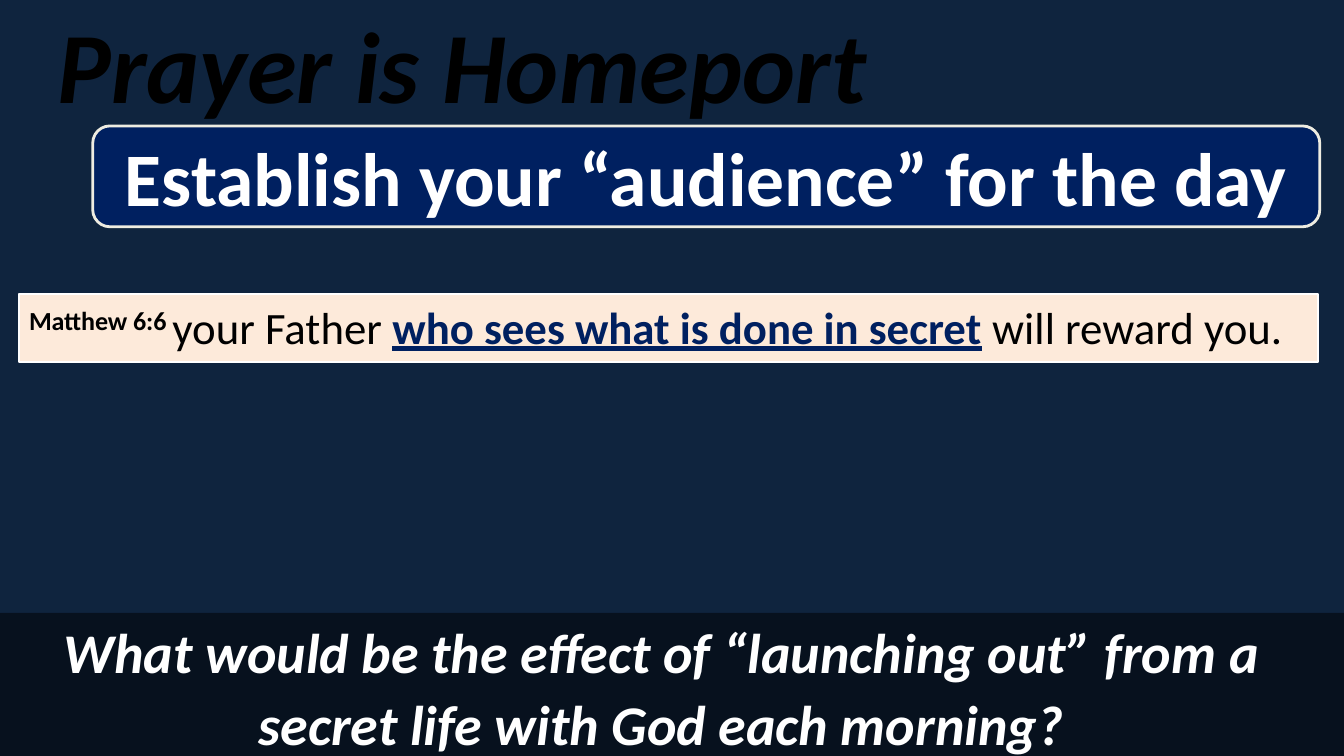
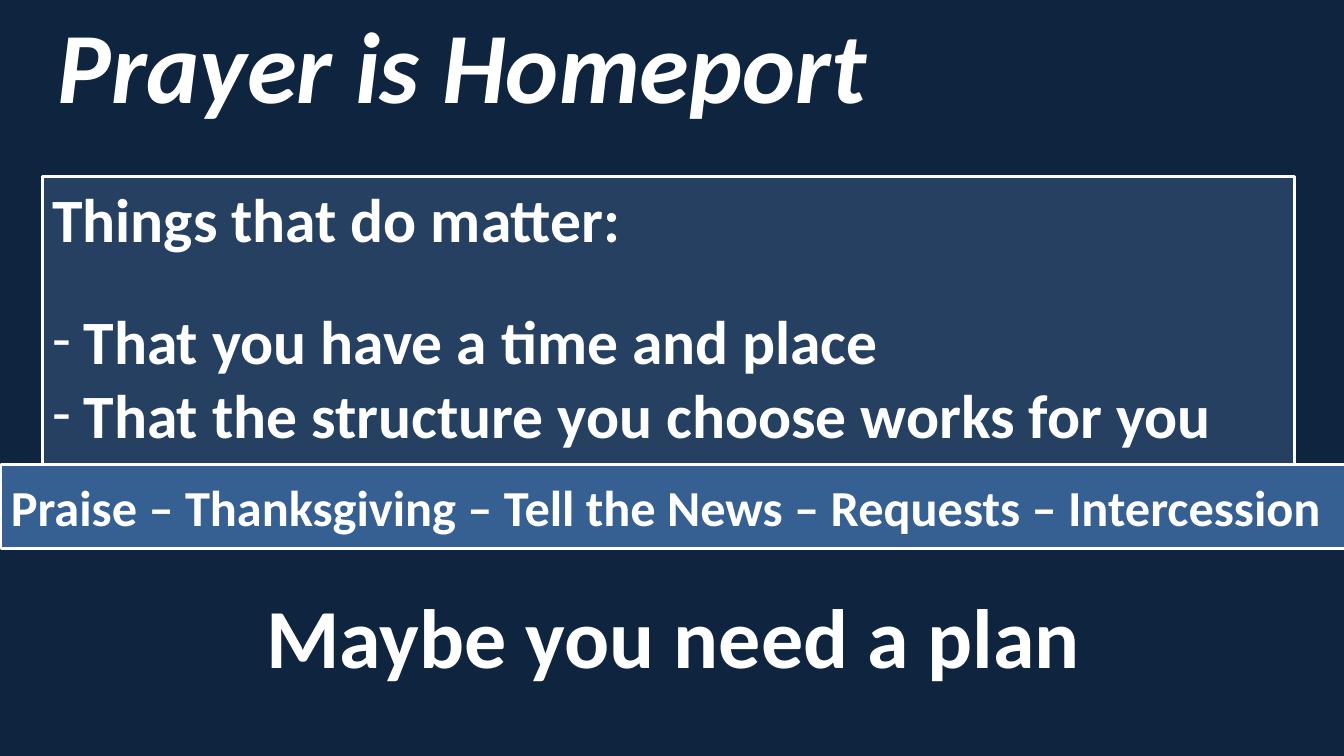
from dataclasses import dataclass

from lxml import etree
from pptx import Presentation
from pptx.dml.color import RGBColor
from pptx.enum.shapes import MSO_SHAPE as SHAPE
from pptx.enum.text import MSO_ANCHOR as ANCHOR, PP_ALIGN as ALIGN
from pptx.oxml.ns import qn
from pptx.util import Inches, Pt


@dataclass(frozen=True)
class Theme:
    font: str = "Calibri"
    # Colours
    background: str = "0F243E"
    white: str = "FFFFFF"
    black: str = "000000"
    navy: str = "002060"
    cream: str = "EEECE1"
    peach: str = "FDEADA"
    panel: str = "254061"
    bar: str = "376092"
    # Type sizes
    title: int = 72
    closing: int = 60
    headline: int = 54
    body: int = 44
    question: int = 40
    steps: int = 36
    verse: int = 32


T = Theme()
TITLE = "Prayer is Homeport"
TITLE_BOX = (0, 0, 9.17, 1.25)


# Shared helpers
def add_slide(prs):
    s = prs.slides.add_slide(prs.slide_layouts[6])
    fill = s.background.fill
    fill.solid()
    fill.fore_color.rgb = RGBColor.from_string(T.background)
    return s


def add_run(p, text, size, color=T.white, bold=True, italic=False, underline=False):
    r = p.add_run()
    r.text = text
    f = r.font
    f.name, f.size = T.font, Pt(size)
    f.bold, f.italic, f.underline = bold, italic, underline
    f.color.rgb = RGBColor.from_string(color)
    return r


def add_paragraph(tf, first=False, align=ALIGN.LEFT):
    p = tf.paragraphs[0] if first else tf.add_paragraph()
    p.alignment = align
    return p


def setup_frame(sp, anchor):
    tf = sp.text_frame
    tf.word_wrap = True
    tf.vertical_anchor = anchor
    return tf


def add_label(s, box, text, size, color=T.white, italic=False):
    sp = s.shapes.add_textbox(*map(Inches, box))
    p = add_paragraph(setup_frame(sp, ANCHOR.MIDDLE), True, ALIGN.CENTER)
    add_run(p, text, size, color, italic=italic)


def add_box(s, box, fill, line=None, width=2, kind=SHAPE.RECTANGLE, anchor=ANCHOR.MIDDLE):
    sp = s.shapes.add_shape(kind, *map(Inches, box))
    sp.shadow.inherit = False
    sp.fill.solid()
    sp.fill.fore_color.rgb = RGBColor.from_string(fill)
    if line:
        sp.line.color.rgb = RGBColor.from_string(line)
        sp.line.width = Pt(width)
    else:
        sp.line.fill.background()
    return sp, setup_frame(sp, anchor)


def add_callout(s, box, fill, line=None):
    sp, tf = add_box(s, box, fill, line, kind=SHAPE.ROUNDED_RECTANGULAR_CALLOUT)
    for i, value in enumerate((-0.22, 0.5, 0.17)):
        sp.adjustments[i] = value
    return sp, tf


def set_opacity(sp, percent):
    color = sp.element.spPr.find(qn("a:solidFill"))[0]
    etree.SubElement(color, qn("a:alpha")).set("val", str(percent * 1000))


def set_dash_bullet(p, indent):
    pPr = p._p.get_or_add_pPr()
    pPr.set("marL", str(Inches(indent)))
    pPr.set("indent", str(-Inches(indent)))
    etree.SubElement(pPr, qn("a:buFont")).set("typeface", T.font)
    etree.SubElement(pPr, qn("a:buChar")).set("char", "-")


# Regions
def add_question(s, box, lines):
    sp, tf = add_callout(s, box, T.black)
    set_opacity(sp, 51)
    tf.margin_right = Inches(0.24)
    for i, text in enumerate(lines):
        p = add_paragraph(tf, i == 0, ALIGN.CENTER)
        p.line_spacing = 1.07
        add_run(p, text, T.question, italic=True)


def add_headline(s, box, text):
    _, tf = add_callout(s, box, T.navy, T.cream)
    add_run(add_paragraph(tf, True, ALIGN.CENTER), text, T.headline)


def add_verse(s, box):
    _, tf = add_box(s, box, T.peach, T.white, 1.5, anchor=ANCHOR.TOP)
    p = add_paragraph(tf, True)
    r = add_run(p, "Matthew 6:6 ", T.verse, T.black)
    r._r.get_or_add_rPr().set("baseline", "30000")
    add_run(p, "your Father ", T.verse, T.black, bold=False)
    add_run(p, "who sees what is done in secret", T.verse, T.navy, underline=True)
    add_run(p, " will reward you.", T.verse, T.black, bold=False)


def add_points(s, box, heading, points):
    _, tf = add_box(s, box, T.panel, T.white, anchor=ANCHOR.TOP)
    p = add_paragraph(tf, True)
    p.space_after = Pt(34)
    add_run(p, heading, T.body)
    for text in points:
        p = add_paragraph(tf)
        set_dash_bullet(p, 0.31)
        add_run(p, text, T.body)


def add_steps(s, box, steps):
    _, tf = add_box(s, box, T.bar, T.white)
    add_run(add_paragraph(tf, True), " – ".join(steps), T.steps)


# Slides
def audience_slide(prs):
    s = add_slide(prs)
    add_label(s, TITLE_BOX, TITLE, T.title, T.black, italic=True)
    add_question(s, (-0.33, 6.08, 13.92, 1.42), (
        "What would be the effect of “launching out” from a",
        "secret life with God each morning?",
    ))
    add_headline(s, (0.92, 1.25, 12.17, 1), "Establish your “audience” for the day")
    add_verse(s, (0.19, 2.92, 12.88, 0.67))


def plan_slide(prs):
    s = add_slide(prs)
    add_label(s, TITLE_BOX, TITLE, T.title, italic=True)
    add_label(s, (0, 5.67, 13.36, 1.25), "Maybe you need a plan", T.closing)
    add_points(s, (0.42, 1.75, 12.42, 3.67), "Things that do matter:", (
        "That you have a time and place",
        "That the structure you choose works for you",
    ))
    add_steps(s, (0.01, 4.61, 13.36, 0.83), (
        "Praise", "Thanksgiving", "Tell the News", "Requests", "Intercession",
    ))


def main():
    prs = Presentation()
    prs.slide_width, prs.slide_height = Inches(13.33), Inches(7.5)
    audience_slide(prs)
    plan_slide(prs)
    prs.save("out.pptx")


if __name__ == "__main__":
    main()
